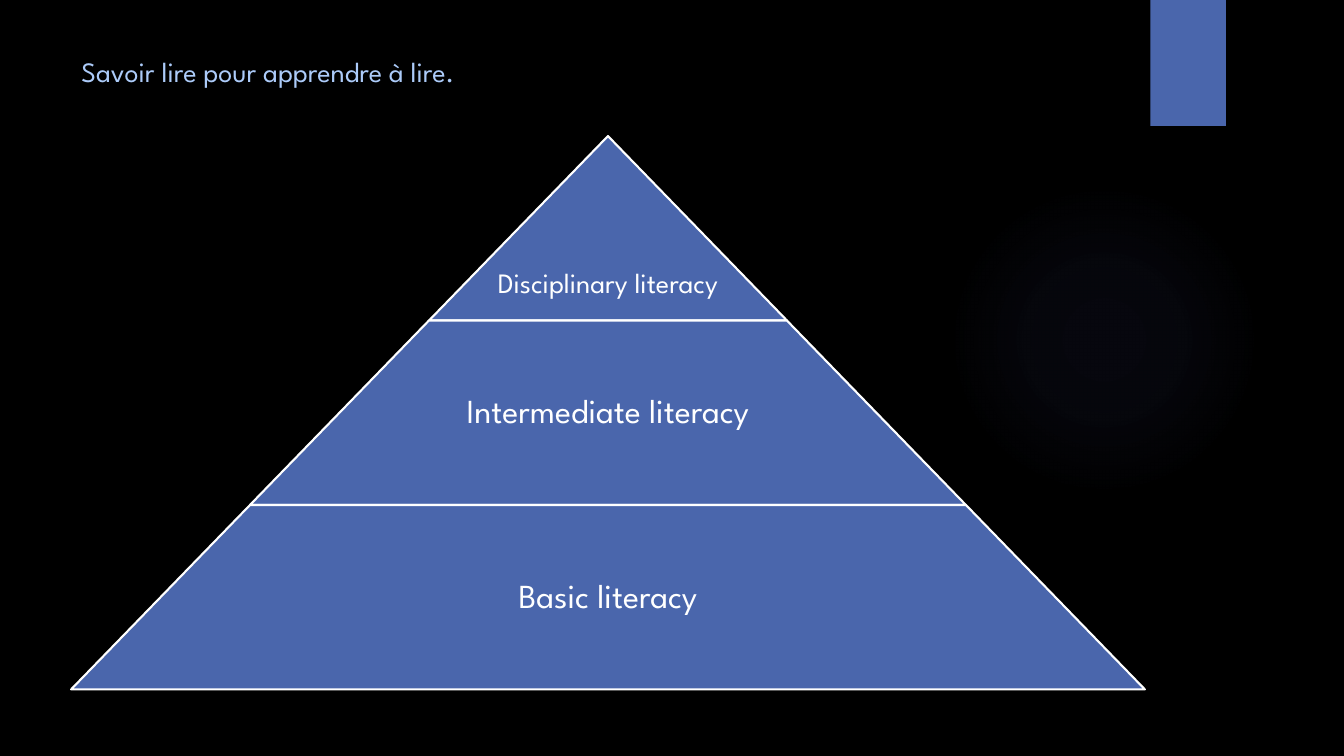
import pptx
import pptx.util
import pptx.dml.color
import pptx.enum.shapes
import pptx.enum.text
import pptx.oxml
import pptx.oxml.ns

Inches = pptx.util.Inches
Shapes = pptx.enum.shapes.MSO_SHAPE
Align = pptx.enum.text.PP_ALIGN


def color(hex_string):
    return pptx.dml.color.RGBColor.from_string(hex_string)


def add_label(text, left, top, width, height, size, hex_string, align, inset):
    box = slide.shapes.add_textbox(Inches(left), Inches(top), Inches(width), Inches(height))
    frame = box.text_frame
    frame.word_wrap = True
    frame.vertical_anchor = pptx.enum.text.MSO_ANCHOR.MIDDLE
    frame.margin_left = frame.margin_right = Inches(inset)
    frame.margin_top = frame.margin_bottom = Inches(0.03)
    frame.text = text
    paragraph = frame.paragraphs[0]
    paragraph.alignment = align
    font = paragraph.runs[0].font
    font.name = "League Spartan"
    font.size = pptx.util.Pt(size)
    font.color.rgb = color(hex_string)
    return paragraph


presentation = pptx.Presentation()
presentation.slide_width = Inches(13.33)
presentation.slide_height = Inches(7.5)
slide = presentation.slides.add_slide(presentation.slide_layouts[6])
slide.background.fill.solid()
slide.background.fill.fore_color.rgb = color("000000")

# Faint round glow, fading towards the edge
glow = slide.shapes.add_shape(Shapes.OVAL, Inches(9.41), Inches(1.83), Inches(3.08), Inches(3.08))
glow.shadow.inherit = False
glow.line.fill.background()
stops = "".join(
    f'<a:gs pos="{position * 1000}"><a:srgbClr val="5C64B7">'
    f'<a:alpha val="{alpha * 1000}"/></a:srgbClr></a:gs>'
    for position, alpha in ((0, 7), (36, 6), (69, 0))
)
gradient = pptx.oxml.parse_xml(
    f'<a:gradFill {pptx.oxml.ns.nsdecls("a")}><a:gsLst>{stops}</a:gsLst><a:path path="circle">'
    '<a:fillToRect l="50000" t="50000" r="50000" b="50000"/></a:path></a:gradFill>'
)
glow.element.spPr.find(pptx.oxml.ns.qn("a:prstGeom")).addnext(gradient)

# Corner tab
tab = slide.shapes.add_shape(Shapes.RECTANGLE, Inches(11.41), 0, Inches(0.75), Inches(1.25))
tab.shadow.inherit = False
tab.fill.solid()
tab.fill.fore_color.rgb = color("4A66AC")
tab.line.fill.background()

# Title
add_label("Savoir lire pour apprendre à lire.", 0.71, 0.5, 10.49, 0.41, 20, "ACCBF9", Align.LEFT, 0.1)

# Pyramid: each tier is one step wider than the tier above
center, pyramid_top, tier_height, step = 6.03, 1.35, 1.83, 3.55
tiers = [
    ("Disciplinary literacy", 20, 0.72),
    ("Intermediate literacy", 24, tier_height),
    ("Basic literacy", 24, tier_height),
]
for index, (text, size, label_height) in enumerate(tiers):
    width = step * (index + 1)
    left = center - width / 2
    top = pyramid_top + index * tier_height
    tier = slide.shapes.add_shape(
        Shapes.TRAPEZOID, Inches(left), Inches(top), Inches(width), Inches(tier_height))
    tier.adjustments[0] = step / 2 / tier_height
    tier.shadow.inherit = False
    tier.fill.solid()
    tier.fill.fore_color.rgb = color("4A66AC")
    tier.line.color.rgb = color("FFFFFF")
    tier.line.width = pptx.util.Pt(1.5)

    # The label sits at the foot of its tier, where there is room
    label_top = top + tier_height - label_height
    label = add_label(text, left, label_top, width, label_height, size, "FFFFFF", Align.CENTER, 0.03)
    label.line_spacing = 0.9

presentation.save("out.pptx")
